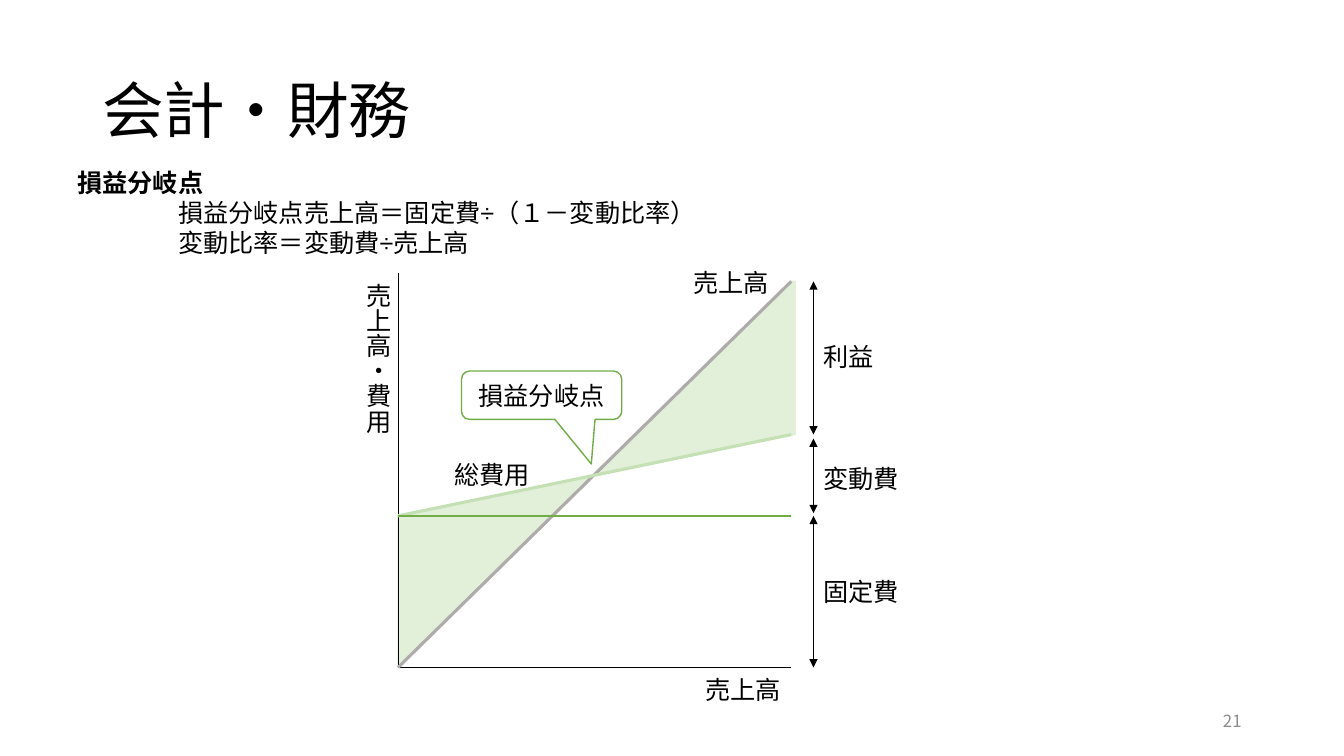
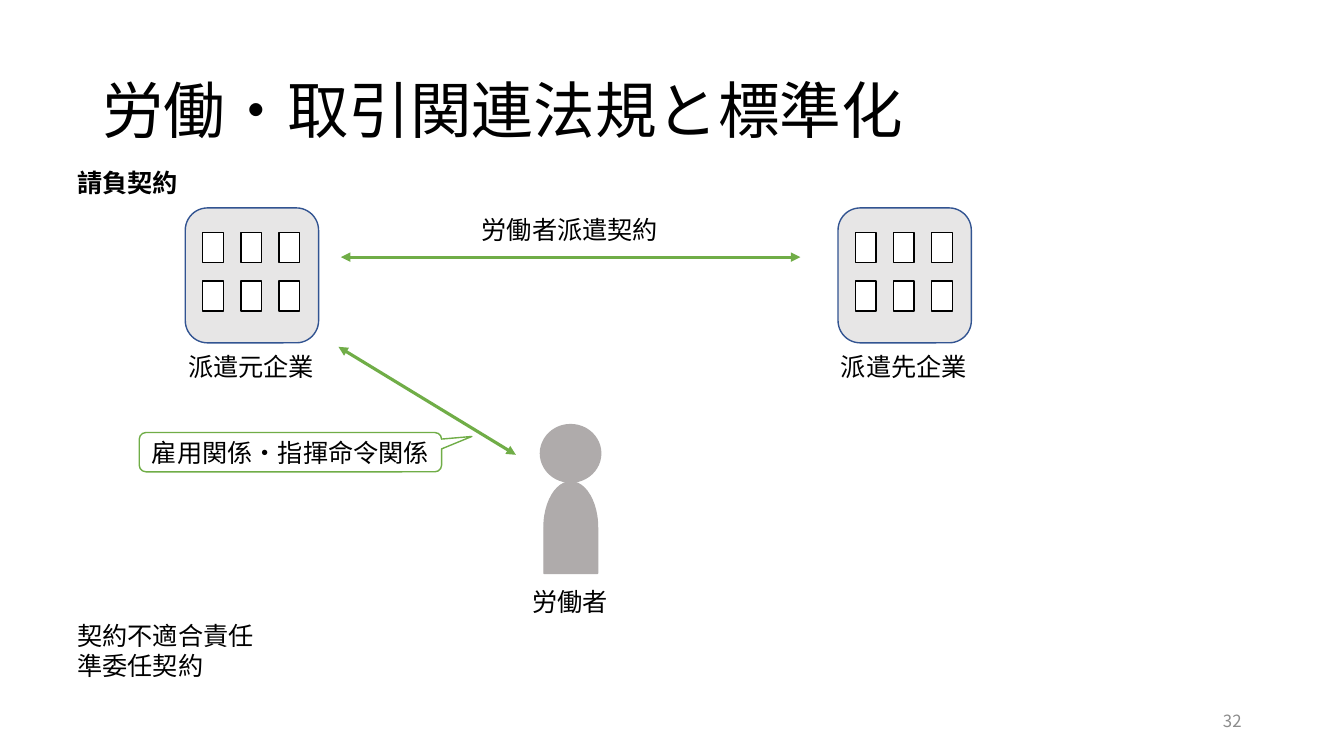
from lxml.etree import SubElement
from pptx import Presentation
from pptx.dml.color import RGBColor
from pptx.enum.shapes import MSO_CONNECTOR, MSO_SHAPE
from pptx.enum.text import MSO_ANCHOR, PP_ALIGN
from pptx.oxml.ns import qn
from pptx.util import Cm, Pt

JAPANESE_FONT = "Noto Sans CJK JP"
BLACK, WHITE, GREEN, GRAY = "000000", "FFFFFF", "70AD47", "AFABAB"
PALE_GREEN, LIGHT_GREEN = "E2F0D9", "C5E0B4"
WALL, WALL_LINE, PAGE_GRAY = "E7E6E6", "325491", "8C8C8C"

LABEL = {"size": 18, "color": BLACK, "font": JAPANESE_FONT, "spacing": Pt(21.6)}
CENTERED = {**LABEL, "align": PP_ALIGN.CENTER}
BODY = {**LABEL, "font": "Arial"}
TITLE = {**LABEL, "size": 44, "spacing": 0.9, "anchor": MSO_ANCHOR.MIDDLE}
PAGE_NUMBER = {**LABEL, "size": 12, "color": PAGE_GRAY, "spacing": 1.0,
               "anchor": MSO_ANCHOR.MIDDLE, "align": PP_ALIGN.RIGHT}
CALLOUT = {**CENTERED, "anchor": MSO_ANCHOR.MIDDLE,
           "frame": {"margin_left": 0, "margin_right": 0}}

LABEL_HEIGHT = 1.02
BODY_LEFT, BODY_WIDTH = 1.7, 30.45


def set_color(color_format, hex_value):
    color_format.rgb = RGBColor.from_string(hex_value)


def apply_format(target, values):
    for name, value in values.items():
        setattr(target, name, value)


def write_text(shape, lines, style):
    frame = shape.text_frame
    apply_format(frame, {"word_wrap": True,
                         "vertical_anchor": style.get("anchor", MSO_ANCHOR.TOP),
                         **style.get("frame", {})})
    for index, line in enumerate(lines):
        paragraph = frame.paragraphs[0] if index == 0 else frame.add_paragraph()
        apply_format(paragraph, {"alignment": style.get("align", PP_ALIGN.LEFT),
                                 "line_spacing": style["spacing"]})
        run = paragraph.add_run()
        run.text = line
        apply_format(run.font, {"size": Pt(style["size"]), "name": style["font"],
                                "bold": style.get("bold", False)})
        set_color(run.font.color, style["color"])
    for properties in shape.element.iter(qn("a:rPr")):
        SubElement(properties, qn("a:ea")).set("typeface", JAPANESE_FONT)


def add_text(slide, box, lines, style=LABEL, vertical=False):
    shape = slide.shapes.add_textbox(*map(Cm, box))
    write_text(shape, lines, style)
    if vertical:
        shape.element.find(".//" + qn("a:bodyPr")).set("vert", "eaVert")
    return shape


def add_label(slide, left, top, text, width=2.44, style=LABEL):
    add_text(slide, (left, top, width, LABEL_HEIGHT), [text], style)


def paint(shape, fill, line):
    shape.shadow.inherit = False
    shape.fill.solid()
    set_color(shape.fill.fore_color, fill)
    set_color(shape.line.color, line)
    shape.line.width = Pt(1)


def add_figure(slide, kind, box, fill, line):
    shape = slide.shapes.add_shape(kind, *map(Cm, box))
    paint(shape, fill, line)
    return shape


def add_region(slide, points):
    corners = [(Cm(x), Cm(y)) for x, y in points]
    builder = slide.shapes.build_freeform(*corners[0], scale=1.0)
    builder.add_line_segments(corners[1:], close=True)
    paint(builder.convert_to_shape(), PALE_GREEN, PALE_GREEN)


def add_line(slide, start, end, color, width, arrows=False):
    connector = slide.shapes.add_connector(
        MSO_CONNECTOR.STRAIGHT, *map(Cm, (*start, *end)))
    set_color(connector.line.color, color)
    connector.line.width = Pt(width)
    if arrows:
        outline = connector.line.fill and connector.element.spPr.find(qn("a:ln"))
        for tag in ("a:headEnd", "a:tailEnd"):
            SubElement(outline, qn(tag)).set("type", "triangle")
    SubElement(connector.element.spPr, qn("a:effectLst"))


def add_callout(slide, box, text, pointer):
    shape = add_figure(slide, MSO_SHAPE.ROUNDED_RECTANGULAR_CALLOUT, box, WHITE, GREEN)
    for index, value in enumerate(pointer):
        shape.adjustments[index] = value
    write_text(shape, [text], CALLOUT)


def add_building(slide, left, name):
    top = 5.24
    add_figure(slide, MSO_SHAPE.ROUNDED_RECTANGLE, (left, top, 3.36, 3.4), WALL, WALL_LINE)
    for row in range(2):
        for column in range(3):
            window = (left + 0.44 + 0.96 * column, top + 0.62 + 1.22 * row, 0.52, 0.76)
            add_figure(slide, MSO_SHAPE.RECTANGLE, window, WHITE, BLACK)
    add_label(slide, left - 0.22, 8.74, name, 3.76, CENTERED)


def add_worker(slide):
    add_figure(slide, MSO_SHAPE.OVAL, (13.62, 10.7, 1.52, 1.45), GRAY, GRAY)
    body = add_figure(slide, MSO_SHAPE.FLOWCHART_DELAY, (13.23, 12.62, 2.31, 1.35), GRAY, GRAY)
    body.rotation = 270
    add_label(slide, 12.42, 14.66, "労働者", 3.91, CENTERED)


def add_base_slide(presentation, title, number, heading):
    slide = presentation.slides.add_slide(presentation.slide_layouts[6])
    add_text(slide, (2.33, 1.02, 29.21, 3.68), [title], TITLE)
    add_text(slide, (23.92, 17.65, 7.62, LABEL_HEIGHT), [number], PAGE_NUMBER)
    add_text(slide, (BODY_LEFT, 4.09, BODY_WIDTH, LABEL_HEIGHT), [heading],
             {**BODY, "bold": True})
    return slide


def add_break_even_chart(slide):
    left, right, bottom = 10.03, 19.94, 16.82
    sales_end, cost_start, cost_end = 7.09, 13.0, 10.95
    share = (bottom - cost_start) / (bottom - cost_start + cost_end - sales_end)
    crossing = (left + share * (right - left), bottom - share * (bottom - sales_end))
    edge = right + 0.1

    add_region(slide, [(left, cost_start), crossing, (left, bottom)])
    add_region(slide, [crossing, (right, sales_end), (edge, sales_end), (edge, cost_end)])
    for start, end, color, width in (
        ((left, 6.88), (left, bottom), BLACK, 0.5),
        ((left, bottom), (right, bottom), BLACK, 0.5),
        ((left, bottom), (right, sales_end), GRAY, 2.25),
        ((left, cost_start), (right, cost_end), LIGHT_GREEN, 2.25),
        ((left, cost_start), (right, cost_start), GREEN, 1.5),
    ):
        add_line(slide, start, end, color, width)

    measure = 20.5
    for top, end, label_top, text in (
        (sales_end, cost_end, 8.48, "利益"),
        (cost_end + 0.1, cost_start - 0.07, 11.56, "変動費"),
        (cost_start, bottom, 14.4, "固定費"),
    ):
        add_line(slide, (measure, top), (measure, end), BLACK, 0.5, arrows=True)
        add_label(slide, measure, label_top, text)

    add_text(slide, (8.76, 6.88, 1.27, 5.41), ["売上高・費用"], vertical=True)
    add_label(slide, 17.53, 16.87, "売上高")
    add_label(slide, 17.22, 6.6, "売上高")
    add_label(slide, 11.2, 11.46, "総費用")
    add_callout(slide, (11.63, 9.35, 4.04, 1.22), "損益分岐点", (0.31, 1.42, 0.17))


def build_accounting_slide(presentation):
    slide = add_base_slide(presentation, "会計・財務", "21", "損益分岐点")
    add_text(slide, (BODY_LEFT + 2.54, 4.85, BODY_WIDTH - 2.54, 1.78),
             ["損益分岐点売上高＝固定費÷（１－変動比率）", "変動比率＝変動費÷売上高"], BODY)
    add_break_even_chart(slide)


def build_labor_slide(presentation):
    slide = add_base_slide(presentation, "労働・取引関連法規と標準化", "32", "請負契約")
    add_text(slide, (BODY_LEFT, 15.5, BODY_WIDTH, 1.78),
             ["契約不適合責任", "準委任契約"], BODY)
    add_building(slide, 4.67, "派遣元企業")
    add_building(slide, 21.12, "派遣先企業")
    add_worker(slide)
    add_line(slide, (8.59, 6.48), (20.17, 6.48), GREEN, 2.25, arrows=True)
    add_line(slide, (8.53, 8.74), (13.0, 11.46), GREEN, 2.25, arrows=True)
    add_label(slide, 11.68, 5.28, "労働者派遣契約", 5.36, CENTERED)
    add_callout(slide, (3.51, 10.9, 7.62, 0.99), "雇用関係・指揮命令関係",
                (0.6, -0.4, 0.17))


def main():
    presentation = Presentation()
    apply_format(presentation, {"slide_width": Cm(33.87), "slide_height": Cm(19.05)})
    build_accounting_slide(presentation)
    build_labor_slide(presentation)
    presentation.save("out.pptx")


if __name__ == "__main__":
    main()
